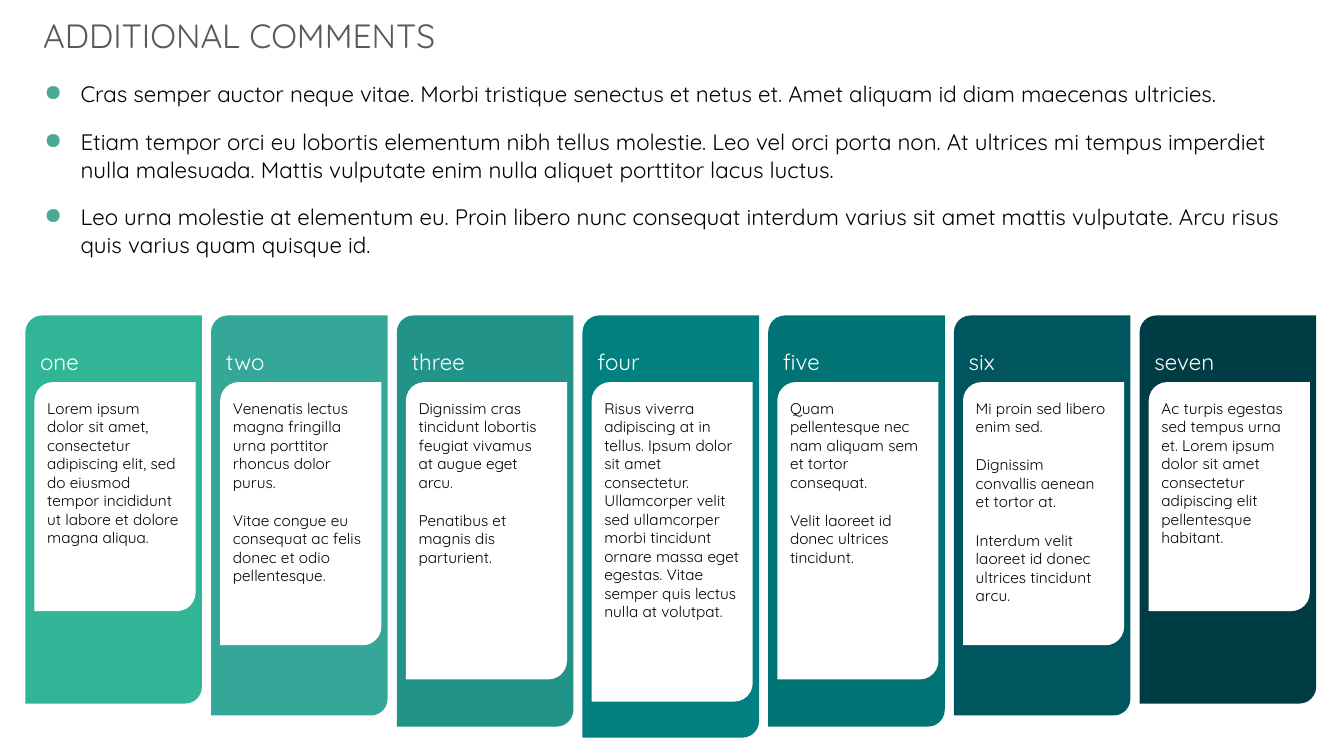
"""Build a slide with three remarks above seven stepped cards."""
from lxml import etree
from pptx import Presentation
from pptx import util as u
from pptx.dml.color import RGBColor
from pptx.enum import shapes, text
from pptx.oxml.ns import qn

TITLE = "ADDITIONAL COMMENTS"
NOTES = [
    "Cras semper auctor neque vitae. Morbi tristique senectus et netus et. Amet aliquam id diam maecenas ultricies.",
    "Etiam tempor orci eu lobortis elementum nibh tellus molestie. Leo vel orci porta non. At ultrices mi tempus "
    "imperdiet nulla malesuada. Mattis vulputate enim nulla aliquet porttitor lacus luctus.",
    "Leo urna molestie at elementum eu. Proin libero nunc consequat interdum varius sit amet mattis vulputate. "
    "Arcu risus quis varius quam quisque id.",
]
# label, colour, panel height, card height, text width, text height, lines
CARDS = [
    ("one", "30B697", 9.78, 5.77, 3.81, 5.46, [
        "Lorem ipsum dolor sit amet, consectetur adipiscing elit, sed do eiusmod tempor incididunt "
        "ut labore et dolore magna aliqua."]),
    ("two", "34A798", 10.08, 6.63, 3.96, 5.94, [
        "Venenatis lectus magna fringilla urna porttitor rhoncus dolor purus.",
        "Vitae congue eu consequat ac felis donec et odio pellentesque."]),
    ("three", "229389", 10.36, 7.49, 3.73, 4.52, [
        "Dignissim cras tincidunt lobortis feugiat vivamus at augue eget arcu.",
        "Penatibus et magnis dis parturient."]),
    ("four", "008081", 10.64, 8.05, 4.06, 5.89, [
        "Risus viverra adipiscing at in tellus. Ipsum dolor sit amet consectetur. Ullamcorper velit sed "
        "ullamcorper morbi tincidunt ornare massa eget egestas. Vitae semper quis lectus nulla at volutpat."]),
    ("five", "007475", 10.36, 7.49, 3.81, 5.49, [
        "Quam pellentesque nec nam aliquam sem et tortor consequat.",
        "Velit laoreet id donec ultrices tincidunt."]),
    ("six", "00565E", 10.08, 6.63, 3.81, 5.49, [
        "Mi proin sed libero enim sed.",
        "Dignissim convallis aenean et tortor at.",
        "Interdum velit laoreet id donec ultrices tincidunt arcu."]),
    ("seven", "003C43", 9.78, 5.77, 3.81, 4.01, [
        "Ac turpis egestas sed tempus urna et. Lorem ipsum dolor sit amet consectetur adipiscing elit "
        "pellentesque habitant."]),
]
FONT = "Quicksand"
LEFT, STEP = 0.64, 4.68


def tint(code):
    return RGBColor.from_string(code)


def area(*sides):
    return [u.Cm(side) for side in sides]


def write(frame, lines, size=11, color="000000", after=0, dot=None):
    frame.word_wrap = True
    frame.vertical_anchor = text.MSO_ANCHOR.TOP
    for i, line in enumerate(lines):
        para = frame.paragraphs[0] if i == 0 else frame.add_paragraph()
        para.alignment = text.PP_ALIGN.LEFT
        para.space_after = u.Pt(after)
        run = para.add_run()
        run.text = line
        run.font.name, run.font.size = FONT, u.Pt(size)
        run.font.color.rgb = tint(color)
        if dot:
            props = para._p.get_or_add_pPr()
            props.set("marL", str(u.Cm(1.27)))
            props.set("indent", str(u.Cm(-0.91)))
            hue = etree.SubElement(props, qn("a:buClr"))
            etree.SubElement(hue, qn("a:srgbClr"), val=dot)
            etree.SubElement(props, qn("a:buChar"), char="●")


def panel(slide, box, color, curve):
    shape = slide.shapes.add_shape(shapes.MSO_SHAPE.ROUND_2_DIAG_RECTANGLE, *area(*box))
    shape.adjustments[0], shape.adjustments[1] = curve, 0
    shape.shadow.inherit = False
    shape.fill.solid()
    shape.fill.fore_color.rgb = tint(color)
    shape.line.fill.background()
    return shape


def label(slide, box, lines, **style):
    frame = slide.shapes.add_textbox(*area(*box)).text_frame
    write(frame, lines, **style)


def remarks(slide):
    table = slide.shapes.add_table(1, 1, *area(0, 1.52, 33.25, 6.07)).table
    table.first_row = table.horz_banding = False
    cell = table.cell(0, 0)
    cell.fill.background()
    cell.margin_left = cell.margin_right = u.Cm(0.76)
    cell.margin_top = cell.margin_bottom = u.Cm(0.51)
    write(cell.text_frame, NOTES, size=16, after=14, dot="4BA895")
    cell.vertical_anchor = text.MSO_ANCHOR.TOP


def main():
    deck = Presentation()
    deck.slide_width, deck.slide_height = area(33.87, 19.05)
    slide = deck.slides.add_slide(deck.slide_layouts[6])
    for i, (name, color, tall, inner, wide, high, lines) in enumerate(CARDS):
        x = LEFT + i * STEP
        frame = panel(slide, (x, 7.95, 4.45, tall), color, 0.095).text_frame
        frame.margin_top = u.Cm(0.71)
        write(frame, [name], size=16, color="FFFFFF")
        panel(slide, (x + 0.23, 9.63, 4.06, inner), "FFFFFF", 0.115)
        label(slide, (x + 0.3, 9.93, wide, high), lines, after=14)
    remarks(slide)
    label(slide, (0.84, 0.25, 10.95, 1.27), [TITLE], size=24, color="595959")
    deck.save("out.pptx")


if __name__ == "__main__":
    main()
